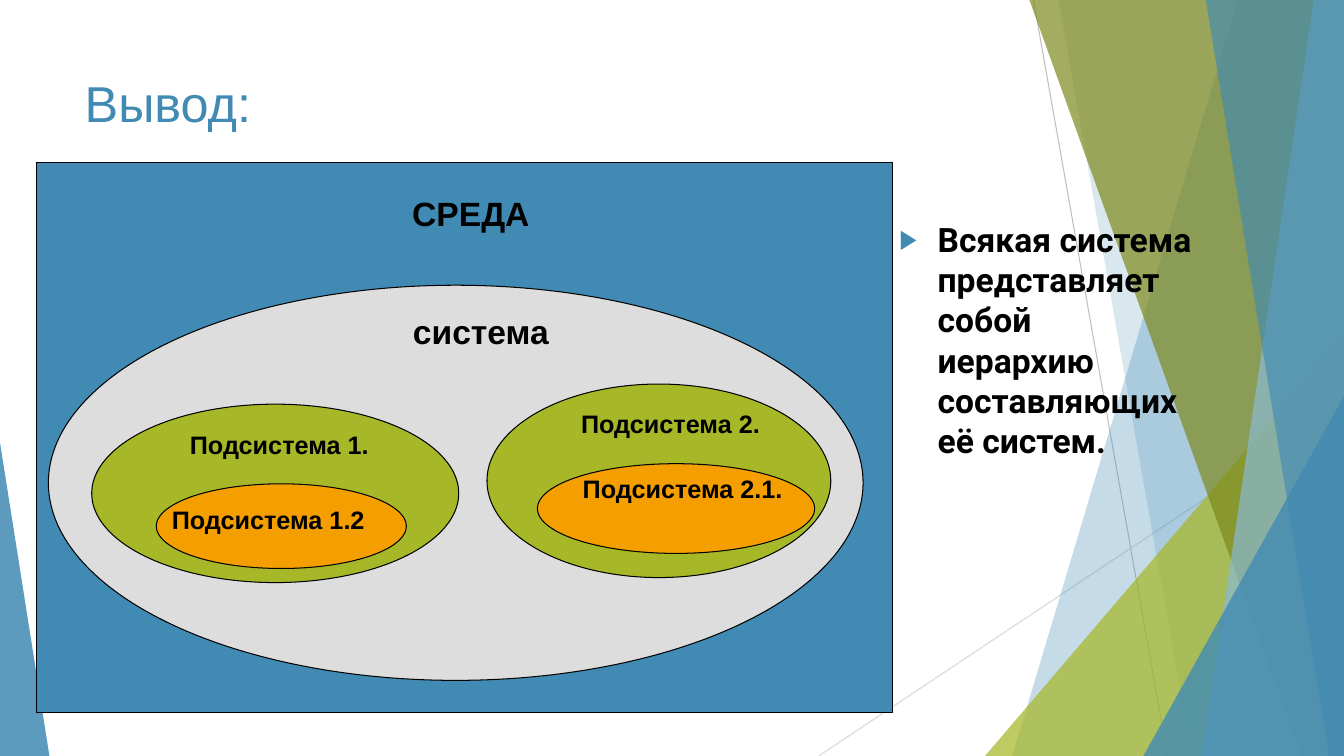
from lxml import etree
from pptx import Presentation
from pptx.dml.color import RGBColor
from pptx.enum.shapes import MSO_CONNECTOR, MSO_SHAPE
from pptx.enum.text import MSO_ANCHOR, MSO_AUTO_SIZE, PP_ALIGN
from pptx.oxml.ns import qn
from pptx.util import Inches, Pt

BLACK = RGBColor(0x00, 0x00, 0x00)
BLUE = RGBColor(0x41, 0x8A, 0xB3)
PALE_BLUE = RGBColor(0x8A, 0xBA, 0xD4)
GREEN = RGBColor(0xA6, 0xB7, 0x27)
OLIVE = RGBColor(0x7D, 0x89, 0x1D)
ORANGE = RGBColor(0xF5, 0x9E, 0x00)
GREY = RGBColor(0xDD, 0xDD, 0xDD)
LINE_GREY = RGBColor(0xBF, 0xBF, 0xBF)
LINE_PALE = RGBColor(0xD9, 0xD9, 0xD9)

WIDTH, HEIGHT = 13.33, 7.5
TITLE = "Вывод:"
BODY = "Всякая система представляет собой иерархию составляющих её систем."

# Background: thin lines, then translucent facets from back to front
THIN_LINES = [
    ((10.25, 0), (11.58, HEIGHT), LINE_GREY),
    ((WIDTH, 4.03), (8.12, HEIGHT), LINE_PALE),
]
# Bands run to the right edge: left end at the top, left end at the bottom
# Triangles stand on the bottom edge: left, top, width, apex position
FACETS = [
    ("band", (12.28, 10.04), BLUE, 30),
    ("band", (10.5, 11.82), BLUE, 20),
    ("triangle", (9.77, 3.33, 3.56, 1), GREEN, 72),
    ("band", (10.21, 12.91), OLIVE, 70),
    ("band", (13.03, 11.92), PALE_BLUE, 70),
    ("band", (11.96, 13.18), BLUE, 65),
    ("triangle", (11.34, 3.93, 1.99, 1), BLUE, 80),
    ("triangle", (0, 4.39, 0.49, 0), BLUE, 85),
]

# Diagram: kind, position and size, fill
SETS = [
    (MSO_SHAPE.RECTANGLE, (0.36, 1.61, 8.49, 5.46), BLUE),
    (MSO_SHAPE.OVAL, (0.48, 2.83, 8.08, 3.92), GREY),
    (MSO_SHAPE.OVAL, (0.91, 4.01, 3.64, 1.77), GREEN),
    (MSO_SHAPE.OVAL, (4.83, 3.81, 3.41, 1.92), GREEN),
    (MSO_SHAPE.OVAL, (1.55, 4.8, 2.48, 0.84), ORANGE),
    (MSO_SHAPE.OVAL, (5.33, 4.6, 2.75, 0.89), ORANGE),
]
# Labels: text, left, top, size
LABEL_WIDTH = 2.18
LABELS = [
    ("СРЕДА", 3.58, 1.86, 24),
    ("Подсистема 1.", 1.68, 4.21, 18),
    ("система", 3.68, 3.04, 24),
    ("Подсистема 1.2", 1.57, 4.95, 18),
    ("Подсистема 2.1.", 5.68, 4.65, 18),
    ("Подсистема 2.", 5.56, 4, 18),
]


def inches(*values):
    return [Inches(value) for value in values]


def style_text(shape, text, font, size, color, bold, align):
    frame = shape.text_frame
    frame.text = text
    frame.word_wrap = True
    frame.auto_size = MSO_AUTO_SIZE.NONE
    frame.vertical_anchor = MSO_ANCHOR.TOP
    para = frame.paragraphs[0]
    para.alignment = align
    span = para.runs[0]
    span.font.name, span.font.size = font, Pt(size)
    span.font.bold, span.font.color.rgb = bold, color
    return para


def add_thin_line(page, start, end, color):
    line = page.shapes.add_connector(MSO_CONNECTOR.STRAIGHT, *inches(*start, *end))
    line.line.color.rgb, line.line.width = color, Pt(0.75)
    etree.SubElement(line._element.spPr, qn("a:effectLst"))


def add_facet(page, kind, geometry, color, opacity):
    if kind == "band":
        top_left, bottom_left = geometry
        builder = page.shapes.build_freeform(*inches(top_left, 0))
        corners = [(WIDTH, 0), (WIDTH, HEIGHT), (bottom_left, HEIGHT)]
        builder.add_line_segments([inches(*corner) for corner in corners])
        facet = builder.convert_to_shape()
    else:
        left, top, width, apex = geometry
        facet = page.shapes.add_shape(MSO_SHAPE.ISOSCELES_TRIANGLE,
                                      *inches(left, top, width, HEIGHT - top))
        facet.adjustments[0] = apex
    facet.shadow.inherit = False
    facet.line.fill.background()
    facet.fill.solid()
    facet.fill.fore_color.rgb = color
    tint = facet._element.spPr.find(qn("a:solidFill"))[0]
    etree.SubElement(tint, qn("a:alpha"), val=str(opacity * 1000))


def add_set(page, kind, box, color):
    shape = page.shapes.add_shape(kind, *inches(*box))
    shape.shadow.inherit = False
    shape.fill.solid()
    shape.fill.fore_color.rgb = color
    shape.line.color.rgb, shape.line.width = BLACK, Pt(0.75)


def add_label(page, text, left, top, size):
    height = 0.5 if size == 24 else 0.4
    label = page.shapes.add_textbox(*inches(left, top, LABEL_WIDTH, height))
    style_text(label, text, "Arial", size, BLACK, True, PP_ALIGN.CENTER)
    label.text_frame.margin_left = label.text_frame.margin_right = 0


def place(page, holder, box):
    """Position a placeholder and bring it in front of the background."""
    holder.left, holder.top, holder.width, holder.height = inches(*box)
    page.shapes._spTree.append(holder._element)


def add_arrow_bullet(para):
    props = para._p.get_or_add_pPr()
    props.set("marL", str(Inches(0.38)))
    props.set("indent", str(-Inches(0.38)))
    color = etree.SubElement(props, qn("a:buClr"))
    etree.SubElement(color, qn("a:srgbClr"), val=str(BLUE))
    etree.SubElement(props, qn("a:buSzPct"), val="80000")
    etree.SubElement(props, qn("a:buFont"), typeface="Arial")
    etree.SubElement(props, qn("a:buChar"), char="▶")


def main():
    deck = Presentation()
    deck.slide_width, deck.slide_height = inches(WIDTH, HEIGHT)
    page = deck.slides.add_slide(deck.slide_layouts[1])

    # Background
    for thin_line in THIN_LINES:
        add_thin_line(page, *thin_line)
    for facet in FACETS:
        add_facet(page, *facet)

    # Title and conclusion
    title, body = page.shapes.title, page.placeholders[1]
    place(page, title, (0.74, 0.67, 9.4, 1.44))
    style_text(title, TITLE, "Arial", 36, BLUE, False, PP_ALIGN.LEFT)
    place(page, body, (8.82, 2.12, 3.1, 4.24))
    para = style_text(body, BODY, "Roboto", 24, BLACK, True, PP_ALIGN.LEFT)
    para.space_before = Pt(10)
    add_arrow_bullet(para)

    # Nested systems diagram
    for item in SETS:
        add_set(page, *item)
    for label in LABELS:
        add_label(page, *label)

    deck.save("out.pptx")


if __name__ == "__main__":
    main()
